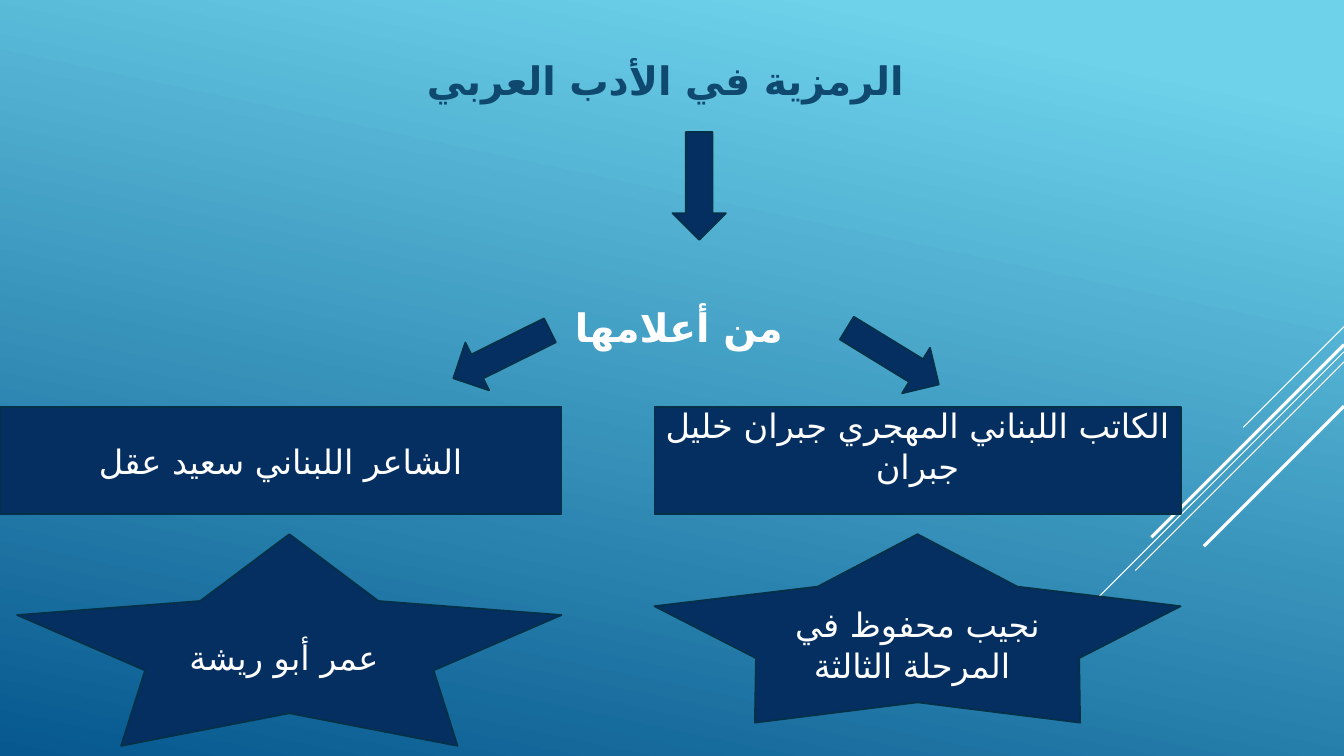
from dataclasses import dataclass

from lxml import etree
from pptx import Presentation
from pptx.dml.color import RGBColor
from pptx.enum.shapes import MSO_CONNECTOR as CONN, MSO_SHAPE as SHAPE
from pptx.enum.text import MSO_ANCHOR as ANCHOR, PP_ALIGN as ALIGN
from pptx.oxml.ns import qn
from pptx.util import Inches, Pt

FONT, ARABIC_FONT = "Times New Roman", "DejaVu Sans"
WHITE, NAVY, EDGE, HEADING = "FFFFFF", "052F61", "043148", "0F496F"
WIDTH, HEIGHT = 13.33, 7.5


@dataclass
class Ray:
    """Diagonal line running down and left from the right edge."""
    top: float
    reach: float
    weight: float


@dataclass
class Block:
    kind: SHAPE
    left: float
    top: float
    width: float
    height: float
    text: str = ""
    rotation: float = 0
    adjust: float | None = None
    flip: bool = False
    bottom_inset: float = 0.05


RAYS = [
    Ray(3.24, 1.0, 0.75),
    Ray(3.49, 3.26, 0.75),
    Ray(3.59, 2.07, 0.75),
    Ray(3.42, 1.91, 2.25),
    Ray(4.03, 1.39, 2.25),
]

BLOCKS = [
    # Arrows
    Block(SHAPE.DOWN_ARROW, 6.67, 1.31, 0.53, 1.07),
    Block(SHAPE.RIGHT_ARROW, 4.44, 3.25, 1.07, 0.53, rotation=153.6),
    Block(SHAPE.RIGHT_ARROW, 8.32, 3.27, 1.07, 0.53, rotation=31.5),
    # Writers
    Block(SHAPE.RECTANGLE, 6.49, 4.04, 5.22, 1.06,
          "الكاتب اللبناني المهجري جبران خليل جبران", bottom_inset=0.35),
    Block(SHAPE.RECTANGLE, 0, 4.04, 5.57, 1.06, "الشاعر اللبناني سعيد عقل"),
    Block(SHAPE.STAR_5_POINT, 6.49, 5.3, 5.22, 1.87,
          "نجيب محفوظ في المرحلة الثالثة ", adjust=0.307, flip=True),
    Block(SHAPE.STAR_5_POINT, 0.17, 5.3, 5.4, 2.1, "عمر أبو ريشة ", adjust=0.265),
]


def rgb(value: str) -> RGBColor:
    return RGBColor.from_string(value)


def write(tf, text: str, size: float, color: str, bold: bool = False):
    """Add one centred run and return its paragraph."""
    tf.word_wrap = True
    tf.vertical_anchor = ANCHOR.MIDDLE
    p = tf.paragraphs[0]
    p.alignment = ALIGN.CENTER
    r = p.add_run()
    r.text = text
    r.font.name = FONT
    r.font.size = Pt(size)
    r.font.bold = bold
    r.font.color.rgb = rgb(color)
    etree.SubElement(r.font._element, qn("a:cs"), typeface=ARABIC_FONT)
    return p


def place(sp, top: float, height: float) -> None:
    """Stretch a placeholder across the slide."""
    sp.left, sp.top = Inches(0), Inches(top)
    sp.width, sp.height = Inches(WIDTH), Inches(height)


def draw_ray(s, ray: Ray) -> None:
    line = s.shapes.add_connector(
        CONN.STRAIGHT, Inches(WIDTH), Inches(ray.top),
        Inches(WIDTH - ray.reach), Inches(ray.top + ray.reach))
    line.line.color.rgb = rgb(WHITE)
    line.line.width = Pt(ray.weight)
    etree.SubElement(line._element.spPr, qn("a:effectLst"))


def draw_block(s, b: Block) -> None:
    sp = s.shapes.add_shape(
        b.kind, Inches(b.left), Inches(b.top), Inches(b.width), Inches(b.height))
    sp.shadow.inherit = False
    sp.fill.solid()
    sp.fill.fore_color.rgb = rgb(NAVY)
    sp.line.color.rgb = rgb(EDGE)
    sp.line.width = Pt(1.25)
    sp.rotation = b.rotation
    if b.adjust is not None:
        sp.adjustments[0] = b.adjust
    if b.flip:
        sp._element.spPr.find(qn("a:xfrm")).set("flipH", "1")
    if b.text:
        sp.text_frame.margin_bottom = Inches(b.bottom_inset)
        write(sp.text_frame, b.text, 24, WHITE)


def main() -> None:
    prs = Presentation()
    prs.slide_width, prs.slide_height = Inches(WIDTH), Inches(HEIGHT)
    s = prs.slides.add_slide(prs.slide_layouts[2])

    # Background
    fill = s.background.fill
    fill.gradient()
    fill.gradient_angle = 258
    for stop, (position, color) in zip(
            fill.gradient_stops, [(0.1, "6ED2EB"), (1, "06588E")]):
        stop.position = position
        stop.color.rgb = rgb(color)

    # Title and heading
    title, body = s.shapes.title, s.placeholders[1]
    place(title, 2.51, 1.47)
    p = write(title.text_frame, "من أعلامها ", 28, WHITE, bold=True)
    p._p.get_or_add_pPr().set("rtl", "1")
    place(body, 0.37, 0.85)
    p = write(body.text_frame, "الرمزية في الأدب العربي ", 28, HEADING, bold=True)
    p.space_after = Pt(6)

    # Decorative rays, then the diagram
    for ray in RAYS:
        draw_ray(s, ray)
    for block in BLOCKS:
        draw_block(s, block)

    prs.save("out.pptx")


if __name__ == "__main__":
    main()
